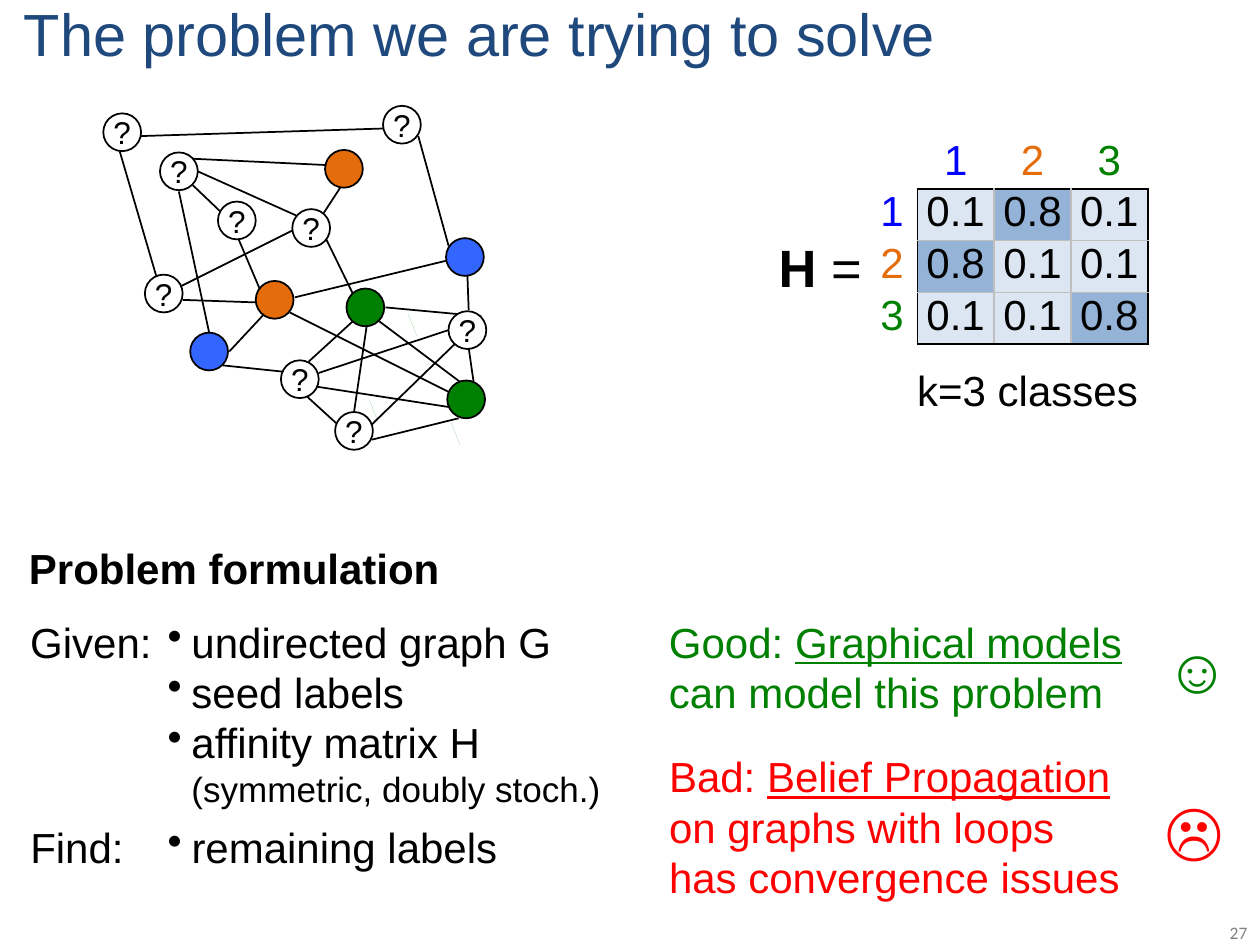
import pptx
import pptx.dml.color
import pptx.enum.shapes
import pptx.enum.text
import pptx.oxml
import pptx.oxml.ns
import pptx.util
from dataclasses import dataclass
from pptx.enum.text import MSO_ANCHOR, PP_ALIGN

PX = 9144
NODE = 30


@dataclass(frozen=True)
class Theme:
    font: str = "Arial"
    number_font: str = "Calibri"
    title: str = "1F497D"
    black: str = "000000"
    white: str = "FFFFFF"
    gray: str = "808080"
    grid: str = "BFBFBF"
    blue: str = "0000FF"
    orange: str = "E46C0A"
    green: str = "008000"
    red: str = "FF0000"
    node_blue: str = "3366FF"
    tick: str = "BFDFBF"
    low: str = "DCE6F2"
    high: str = "95B3D7"
    title_size: int = 34
    face_size: int = 36
    matrix_size: int = 30
    body_size: int = 24
    note_size: int = 20
    node_size: int = 18
    number_size: int = 10


def px(value):
    return pptx.util.Emu(value * PX)


def rgb(color):
    return pptx.dml.color.RGBColor.from_string(color)


class Board:
    def __init__(self, page, theme):
        self.page = page
        self.theme = theme

    def span(self, para, text, size, color, bold=False, underline=False, font=None):
        span = para.add_run()
        span.text = text
        span.font.name = font or self.theme.font
        span.font.size = pptx.util.Pt(size)
        span.font.color.rgb = rgb(color)
        span.font.bold = bold
        span.font.underline = underline

    def frame(self, shape):
        frame = shape.text_frame
        frame.margin_left = frame.margin_right = 0
        frame.margin_top = frame.margin_bottom = 0
        frame.word_wrap = False
        return frame

    def text(self, left, top, width, height, paragraphs, size=None, color=None,
             spacing=None, indent=0, bullet=False, font=None):
        box = self.page.shapes.add_textbox(px(left), px(top), px(width), px(height))
        frame = self.frame(box)
        frame.auto_size = pptx.enum.text.MSO_AUTO_SIZE.SHAPE_TO_FIT_TEXT
        for index, lines in enumerate(paragraphs):
            para = frame.add_paragraph() if index else frame.paragraphs[0]
            if spacing:
                para.line_spacing = spacing
            if indent:
                self.indent(para, indent, bullet)
            for number, line in enumerate(lines):
                if number:
                    para.add_line_break()
                for words, changes in line:
                    style = dict(size=size or self.theme.body_size,
                                 color=color or self.theme.black, font=font)
                    self.span(para, words, **(style | changes))

    def indent(self, para, amount, bullet):
        properties = para._p.get_or_add_pPr()
        properties.set("marL", str(px(amount)))
        properties.set("indent", str(-px(amount) if bullet else 0))
        if bullet:
            mark = pptx.oxml.parse_xml(
                f'<a:buChar {pptx.oxml.ns.nsdecls("a")} char="•"/>')
            properties.append(mark)

    def node(self, left, top, fill, label=""):
        circle = self.page.shapes.add_shape(
            pptx.enum.shapes.MSO_SHAPE.OVAL, px(left), px(top), px(NODE), px(NODE))
        circle.shadow.inherit = False
        circle.fill.solid()
        circle.fill.fore_color.rgb = rgb(fill)
        circle.line.color.rgb = rgb(self.theme.black)
        circle.line.width = pptx.util.Pt(1)
        if label:
            frame = self.frame(circle)
            frame.vertical_anchor = MSO_ANCHOR.MIDDLE
            para = frame.paragraphs[0]
            para.alignment = PP_ALIGN.CENTER
            self.span(para, label, self.theme.node_size, self.theme.black)

    def line(self, x1, y1, x2, y2, color=None, weight=1):
        line = self.page.shapes.add_connector(
            pptx.enum.shapes.MSO_CONNECTOR.STRAIGHT, px(x1), px(y1), px(x2), px(y2))
        line.line.color.rgb = rgb(color or self.theme.black)
        line.line.width = pptx.util.Pt(weight)
        line._element.spPr.append(pptx.oxml.parse_xml(
            f'<a:effectLst {pptx.oxml.ns.nsdecls("a")}/>'))

    def border(self, cell, side, color):
        paint = (f'<a:solidFill><a:srgbClr val="{color}"/></a:solidFill>'
                 if color else "<a:noFill/>")
        cell._tc.get_or_add_tcPr().append(pptx.oxml.parse_xml(
            f'<a:ln{side} {pptx.oxml.ns.nsdecls("a")} w="12700">{paint}</a:ln{side}>'))

    def border_color(self, row, column, side, last):
        if row == 0:
            return self.theme.black if side == "B" and column else None
        if column == 0:
            return self.theme.black if side == "R" else None
        outer = {"L": column == 1, "R": column == last,
                 "T": row == 1, "B": row == last}
        return self.theme.black if outer[side] else self.theme.grid

    def matrix(self, left, top, widths, row_height, values, label_colors):
        theme = self.theme
        count = len(values) + 1
        table = self.page.shapes.add_table(
            count, count, px(left), px(top), px(sum(widths)),
            px(row_height * count)).table
        table.first_row = table.horz_banding = False
        for column, width in enumerate(widths):
            table.columns[column].width = px(width)
        for row in range(count):
            table.rows[row].height = px(row_height)
            for column in range(count):
                cell = table.cell(row, column)
                cell.margin_left = cell.margin_right = 0
                cell.margin_top = cell.margin_bottom = 0
                for side in "LRTB":
                    self.border(cell, side,
                                self.border_color(row, column, side, count - 1))
                words, color, fill = "", theme.black, theme.white
                if row and column:
                    value = values[row - 1][column - 1]
                    words = str(value)
                    fill = theme.high if value > 0.5 else theme.low
                elif row or column:
                    words = str(row + column)
                    color = label_colors[row + column - 1]
                cell.fill.solid()
                cell.fill.fore_color.rgb = rgb(fill)
                para = cell.text_frame.paragraphs[0]
                para.alignment = PP_ALIGN.CENTER
                if words:
                    self.span(para, words, theme.body_size, color)


def plain(*lines):
    return [[(line, {})] for line in lines]


def draw_graph(board):
    theme = board.theme
    for left, top, fill in [
            (354, 189, theme.node_blue), (151, 264, theme.node_blue),
            (355, 302, theme.green), (275, 229, theme.green),
            (258, 119, theme.orange), (203, 223, theme.orange)]:
        board.node(left, top, fill)
    for x, y in [(324, 249), (358, 335), (293, 317)]:
        board.line(x, y, x + 7, y + 18, theme.tick, 0.25)
    for ends in [
            (295, 349, 364, 332), (365, 303, 301, 255), (245, 287, 280, 255),
            (267, 336, 244, 315), (295, 337, 361, 273), (372, 276, 376, 304),
            (382, 251, 306, 244), (356, 262, 253, 296), (356, 323, 252, 307),
            (281, 327, 291, 259), (145, 238, 203, 240), (182, 279, 209, 250),
            (177, 290, 225, 295), (356, 195, 332, 108), (157, 136, 235, 171),
            (153, 126, 259, 131), (153, 147, 175, 168), (144, 227, 232, 183),
            (354, 207, 234, 236), (112, 108, 305, 102), (371, 219, 372, 246),
            (280, 233, 259, 190), (230, 248, 356, 311), (95, 120, 124, 219),
            (142, 152, 166, 264), (189, 189, 206, 229), (270, 149, 257, 169)]:
        board.line(*ends)
    for left, top in [(304, 84), (173, 160), (232, 166), (356, 247), (127, 121),
                      (82, 90), (115, 218), (223, 286), (266, 327)]:
        board.node(left, top, theme.white, "?")


def main():
    theme = Theme()
    deck = pptx.Presentation()
    deck.slide_width, deck.slide_height = px(1000), px(750)
    board = Board(deck.slides.add_slide(deck.slide_layouts[6]), theme)

    board.text(976, 732, 16, 17, [plain("27")], theme.number_size, theme.gray,
               font=theme.number_font)
    board.text(19, 6, 731, 50, [plain("The problem we are trying to solve")],
               theme.title_size, theme.title, spacing=0.85)
    draw_graph(board)

    board.text(618, 196, 67, 42, [[[("H", {"bold": True}), (" =", {})]]],
               theme.matrix_size, spacing=0.8)
    board.matrix(688, 109, [40, 61, 61, 61], 41,
                 [[0.1, 0.8, 0.1], [0.8, 0.1, 0.1], [0.1, 0.1, 0.8]],
                 [theme.blue, theme.orange, theme.green])
    board.text(728, 297, 177, 34, [plain("k=3 classes")], spacing=0.8)

    board.text(23, 438, 329, 34, [[[("Problem formulation", {"bold": True})]]],
               spacing=0.8)
    board.text(24, 489, 97, 40, [plain("Given:")])
    board.text(24, 652, 75, 40, [plain("Find:")])
    note = [("(symmetric, doubly stoch.)", {"size": theme.note_size})]
    board.text(133, 489, 346, 155,
               [plain("undirected graph G"), plain("seed labels"),
                plain("affinity matrix H") + [note]], indent=19, bullet=True)
    board.text(133, 652, 262, 40, [plain("remaining labels")],
               indent=19, bullet=True)

    for top, width, height, color, lead, topic, rest, face, face_top in [
            (489, 363, 81, theme.green, "Good: ", "Graphical models",
             ["can model this problem"], "☺", 500),
            (596, 361, 121, theme.red, "Bad: ", "Belief Propagation",
             ["on graphs with loops", "has convergence issues"], "☹", 627)]:
        opening = [(lead, {}), (topic, {"underline": True})]
        board.text(531, top, width, height, [[opening] + plain(*rest)], color=color)
        board.text(912, face_top, 43, 61, [plain(face)], theme.face_size, color,
                   indent=13)

    deck.save("out.pptx")


if __name__ == "__main__":
    main()
